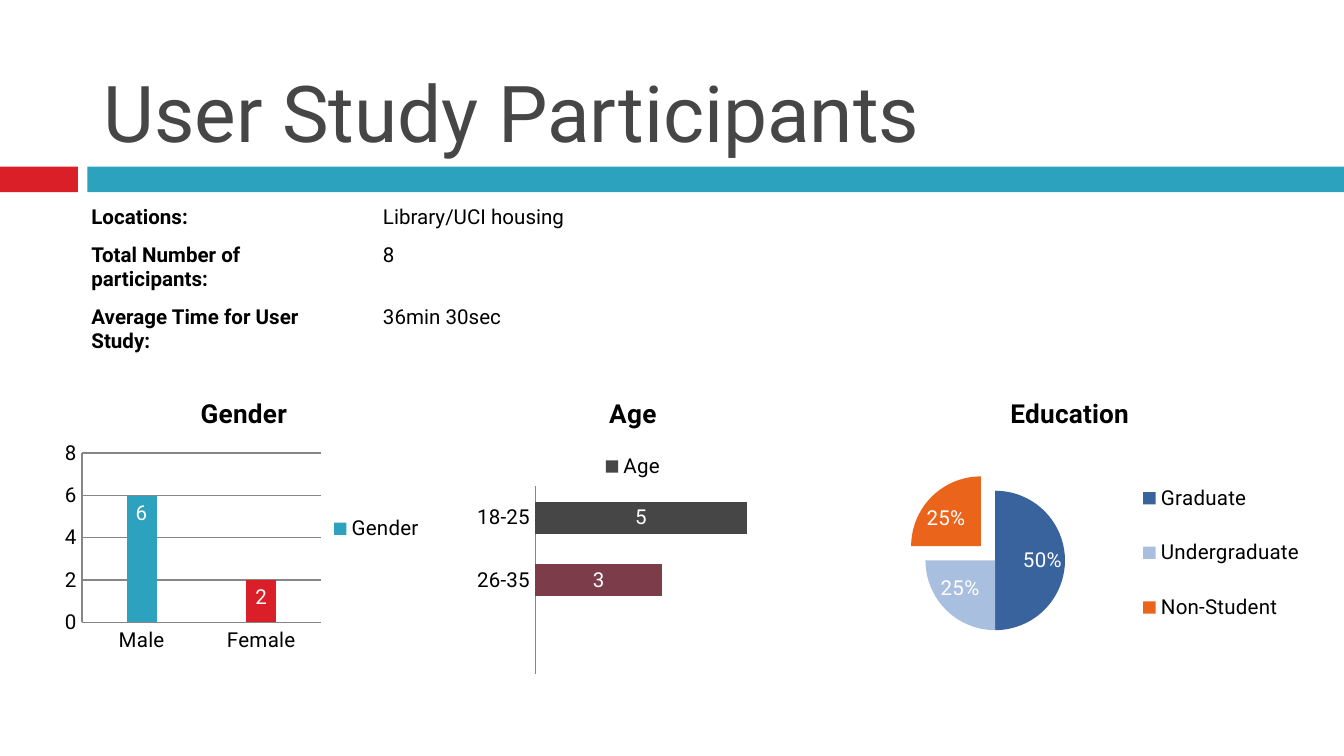
from lxml.etree import SubElement
from pptx import Presentation
from pptx.chart.data import CategoryChartData
from pptx.dml.color import RGBColor
from pptx.enum.chart import XL_CHART_TYPE as CT, XL_LABEL_POSITION as LBL
from pptx.enum.chart import XL_LEGEND_POSITION as LEG, XL_TICK_MARK as TICK
from pptx.enum.shapes import MSO_SHAPE
from pptx.enum.text import MSO_ANCHOR, PP_ALIGN
from pptx.oxml.ns import qn
from pptx.util import Inches, Pt

FONT = "Roboto"
TEAL, RED, GRAY, LINE = "2DA2BF", "DA1F28", "464646", "868686"
FACTS = [
    ("Locations:", "Library/UCI housing", 0.28),
    ("Total Number of participants:", "8", 0.46),
    ("Average Time for User Study:", "36min 30sec", 0.46),
]


def rgb(color):
    return RGBColor.from_string(color)


def set_font(font, size=11, color="000000", bold=False):
    font.name, font.size, font.bold = FONT, Pt(size), bold
    font.color.rgb = rgb(color)


def add_text(tf, text, **fmt):
    r = tf.paragraphs[0].add_run()
    r.text = text
    set_font(r.font, **fmt)


def add_title(s, text):
    sp = s.shapes.title
    sp.left, sp.top, sp.width, sp.height = map(Inches, (0.67, 0.08, 8.83, 1.15))
    tf = sp.text_frame
    tf.vertical_anchor = MSO_ANCHOR.BOTTOM
    add_text(tf, text, size=42, color=GRAY)
    tf.paragraphs[0].alignment = PP_ALIGN.LEFT


def add_band(s, left, width, color):
    sp = s.shapes.add_shape(MSO_SHAPE.RECTANGLE, Inches(left), Inches(1.24),
                            Inches(width), Inches(0.19))
    sp.shadow.inherit = False
    sp.fill.solid()
    sp.fill.fore_color.rgb = rgb(color)
    sp.line.fill.background()


def add_facts(s):
    table = s.shapes.add_table(len(FACTS), 2, Inches(0.58), Inches(1.48),
                               Inches(7.92), Inches(1.2)).table
    table.first_row = table.horz_banding = False
    for col, width in zip(table.columns, (2.17, 5.75)):
        col.width = Inches(width)
    for row, (label, value, height) in zip(table.rows, FACTS):
        row.height = Inches(height)
        for cell, text, bold in zip(row.cells, (label, value), (True, False)):
            cell.fill.background()
            add_text(cell.text_frame, text, bold=bold)


def set_layout(parent, index, box, inner=False):
    for old in parent.findall(qn("c:layout")):
        parent.remove(old)
    layout = SubElement(parent, qn("c:layout"))
    parent.insert(index, layout)
    manual = SubElement(layout, qn("c:manualLayout"))
    settings = [("layoutTarget", "inner")] if inner else []
    settings += [("xMode", "edge"), ("yMode", "edge"), *zip("xywh", box)]
    for tag, value in settings:
        SubElement(manual, qn(f"c:{tag}")).set("val", str(value))


def add_chart(s, kind, left, width, title, cats, name, vals, colors, legend, plot):
    data = CategoryChartData()
    data.categories = cats
    data.add_series(name, vals)
    chart = s.shapes.add_chart(kind, Inches(left), Inches(2.81), Inches(width),
                               Inches(2.25), data).chart
    set_font(chart.font)
    chart.has_title = True
    add_text(chart.chart_title.text_frame, title, size=14, bold=True)
    chart.has_legend = True
    chart.legend.position = legend
    chart.legend.include_in_layout = False
    set_font(chart.legend.font)
    set_layout(chart.plots[0]._element.getparent(), 0, plot, inner=True)
    chart.plots[0].vary_by_categories = kind == CT.PIE
    series = chart.series[0]
    for i, color in enumerate(colors):
        fill = series.points[i].format.fill
        fill.solid()
        fill.fore_color.rgb = rgb(color)
    labels = series.data_labels
    labels.show_value = kind != CT.PIE
    labels.show_percentage = kind == CT.PIE
    set_font(labels.font, color="FFFFFF")
    return chart


def style_bars(chart, color, gap, top):
    plot = chart.plots[0]
    plot.gap_width, plot.overlap = gap, 100
    fill = chart.series[0].format.fill
    fill.solid()
    fill.fore_color.rgb = rgb(color)
    axis = chart.value_axis
    axis.minimum_scale, axis.maximum_scale, axis.major_unit = 0, top, 2
    for ax in (axis, chart.category_axis):
        ax.major_tick_mark = ax.minor_tick_mark = TICK.NONE
        ax.format.line.color.rgb = rgb(LINE)
        set_font(ax.tick_labels.font)


def add_gender(s):
    chart = add_chart(s, CT.COLUMN_STACKED, 0.38, 2.87, "Gender", ["Male", "Female"],
                      "Gender", [6, 2], [TEAL, RED], LEG.RIGHT,
                      (0.08, 0.25, 0.62, 0.56))
    style_bars(chart, TEAL, 300, 8)
    chart.value_axis.major_gridlines.format.line.color.rgb = rgb(LINE)
    chart.series[0].data_labels.position = LBL.INSIDE_END


def add_age(s):
    chart = add_chart(s, CT.BAR_STACKED, 3.5, 2.42, "Age", ["", "26-35", "18-25"],
                      "Age", [None, 3, 5], ["35385A", "7D3C4A", GRAY], LEG.TOP,
                      (0.2, 0.36, 0.78, 0.62))
    style_bars(chart, GRAY, 95, 6)
    chart.value_axis.has_major_gridlines = False
    chart.value_axis.visible = False


def add_education(s):
    chart = add_chart(s, CT.PIE, 6.17, 3.58, "Education",
                      ["Graduate", "Undergraduate", "Non-Student"], "Series 1",
                      [50, 25, 25], ["39639D", "A8BFDF", "EB641B"], LEG.RIGHT,
                      (0.2, 0.37, 0.29, 0.47))
    set_layout(chart.legend._element, 1, (0.64, 0.26, 0.35, 0.64))
    point = chart.series[0]._element.findall(qn("c:dPt"))[2]
    explosion = SubElement(point, qn("c:explosion"))
    explosion.set("val", "29")
    point.find(qn("c:spPr")).addprevious(explosion)


def main():
    prs = Presentation()
    prs.slide_width = Inches(10)
    prs.slide_height = prs.slide_width * 9 // 16
    s = prs.slides.add_slide(prs.slide_layouts[5])
    add_band(s, 0, 0.58, RED)
    add_band(s, 0.65, 9.35, TEAL)
    add_title(s, "User Study Participants")
    add_gender(s)
    add_age(s)
    add_education(s)
    add_facts(s)
    prs.save("out.pptx")


if __name__ == "__main__":
    main()
